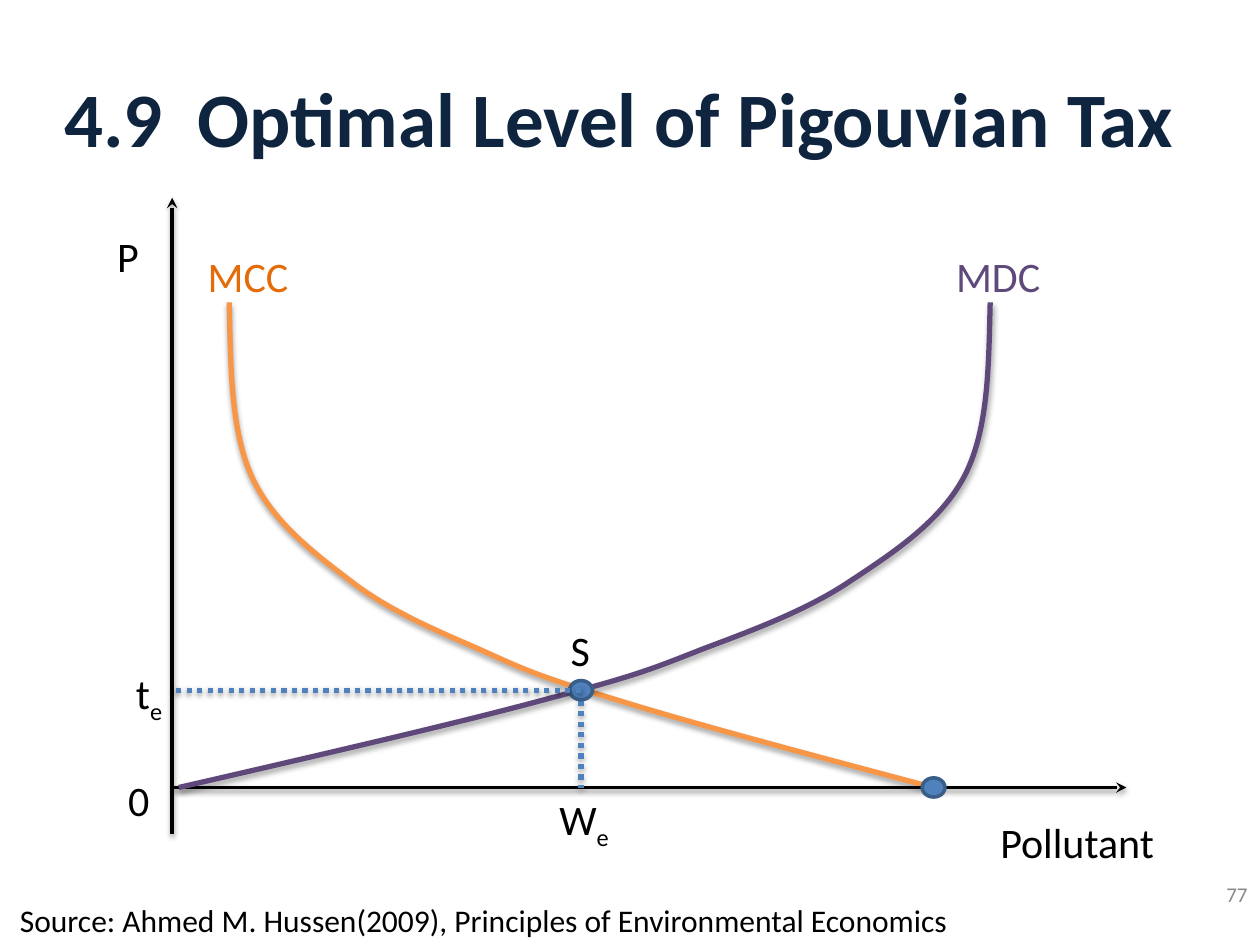
import pptx
import pptx.dml.color
import pptx.enum.dml
import pptx.enum.shapes
import pptx.enum.text
import pptx.oxml
import pptx.oxml.ns
import pptx.util
from lxml import etree

Pt = pptx.util.Pt
ALIGN = pptx.enum.text.PP_ALIGN
ANCHOR = pptx.enum.text.MSO_ANCHOR

FONT = "Calibri"
BLACK, BLUE, ORANGE, PURPLE = "000000", "4F81BD", "F79646", "5F497A"

# Key places of the diagram
AXIS_X, AXIS_Y = 98.4, 450
OPTIMUM_X, OPTIMUM_Y = 332, 394.4
MCC_END = 533.5

# Both curves share one form: percent of the way across, height on the page
CURVE_START_Y = 172.8
CURVE_POINTS = [
    (0.2, 208.8), (0.2, 244.8), (3.1, 271.4),
    (6, 297.6), (11.8, 315.4), (17.2, 331.9),
    (22.5, 348.5), (29.2, 360), (35.4, 370.8),
    (41.7, 382.3), (43.5, 385.9), (54.2, 398.9),
    (65, 412.6), (82.5, 431.3), (100, 450),
]


def color(hex_string):
    return pptx.dml.color.RGBColor.from_string(hex_string)


def add_shadow(shape):
    """Give a line a soft shadow just below it."""
    properties = shape._element.spPr
    effects = etree.SubElement(properties, pptx.oxml.ns.qn("a:effectLst"))
    effects.append(pptx.oxml.parse_xml(
        f'<a:outerShdw {pptx.oxml.ns.nsdecls("a")} blurRad="{Pt(3.1)}" '
        f'dist="{Pt(1.6)}" dir="5400000" rotWithShape="0">'
        '<a:srgbClr val="000000"><a:alpha val="38000"/></a:srgbClr>'
        '</a:outerShdw>'))


def add_label(page, text, box, size=24, ink=BLACK, subscript="", bold=False,
              align=ALIGN.LEFT, anchor=ANCHOR.TOP):
    label = page.shapes.add_textbox(*map(Pt, box))
    frame = label.text_frame
    frame.word_wrap = True
    frame.vertical_anchor = anchor
    para = frame.paragraphs[0]
    para.alignment = align
    para.font.name = FONT
    para.font.size = Pt(size)
    para.font.bold = bold
    para.font.color.rgb = color(ink)
    para.add_run().text = text
    if subscript:
        span = para.add_run()
        span.text = subscript
        span._r.get_or_add_rPr().set("baseline", "-25000")


def add_line(page, start, end, ink, width, dotted=False, arrow=False):
    line = page.shapes.add_connector(
        pptx.enum.shapes.MSO_CONNECTOR.STRAIGHT, *map(Pt, start + end))
    line.line.color.rgb = color(ink)
    line.line.width = Pt(width)
    if dotted:
        line.line.dash_style = pptx.enum.dml.MSO_LINE.ROUND_DOT
        line.line._ln.find(pptx.oxml.ns.qn("a:prstDash")).set("val", "sysDot")
    if arrow:
        etree.SubElement(line.line._ln, pptx.oxml.ns.qn("a:tailEnd"), type="stealth")
    add_shadow(line)


def add_curve(page, start_x, end_x, ink):
    """Lay out the control points, then join each three into a Bezier segment."""
    points = [(Pt(start_x + (end_x - start_x) * share / 100), Pt(y))
              for share, y in CURVE_POINTS]
    builder = page.shapes.build_freeform(Pt(start_x), Pt(CURVE_START_Y))
    builder.add_line_segments(points, close=False)
    curve = builder.convert_to_shape()
    outline = curve._element.find(".//" + pptx.oxml.ns.qn("a:path"))
    steps = outline.findall(pptx.oxml.ns.qn("a:lnTo"))
    for first in range(0, len(steps), 3):
        bezier = etree.SubElement(outline, pptx.oxml.ns.qn("a:cubicBezTo"))
        for step in steps[first:first + 3]:
            bezier.append(step[0])
            outline.remove(step)
    curve.fill.background()
    curve.line.color.rgb = color(ink)
    curve.line.width = Pt(3)
    add_shadow(curve)


def add_dot(page, center_x, center_y, width=13, height=11):
    dot = page.shapes.add_shape(
        pptx.enum.shapes.MSO_SHAPE.OVAL, Pt(center_x - width / 2),
        Pt(center_y - height / 2), Pt(width), Pt(height))
    dot.shadow.inherit = False
    dot.fill.solid()
    dot.fill.fore_color.rgb = color(BLUE)
    dot.line.color.rgb = color("395E89")
    dot.line.width = Pt(2)


def main():
    deck = pptx.Presentation()
    deck.slide_width, deck.slide_height = Pt(720), Pt(540)
    page = deck.slides.add_slide(deck.slide_layouts[6])

    # Title and page number
    add_label(page, "4.9  Optimal Level of Pigouvian Tax ", (14.4, 21.6, 689, 90),
              44, "0F243E", bold=True, align=ALIGN.CENTER, anchor=ANCHOR.MIDDLE)
    add_label(page, "77", (683.3, 496.8, 36.7, 28.8), 12, "888888",
              align=ALIGN.RIGHT, anchor=ANCHOR.MIDDLE)

    # Axes and cost curves
    add_curve(page, 131, MCC_END, ORANGE)
    add_line(page, (AXIS_X, AXIS_Y), (643.7, AXIS_Y), BLACK, 2, arrow=True)
    add_line(page, (AXIS_X, 476.6), (AXIS_X, 113), BLACK, 2, arrow=True)
    add_curve(page, 565.9, 102.2, PURPLE)

    # Optimum, with its guides to both axes
    add_line(page, (OPTIMUM_X, OPTIMUM_Y), (OPTIMUM_X, AXIS_Y), BLUE, 3, dotted=True)
    add_dot(page, OPTIMUM_X, OPTIMUM_Y)
    add_dot(page, MCC_END, AXIS_Y)
    add_line(page, (OPTIMUM_X, OPTIMUM_Y), (100, OPTIMUM_Y), BLUE, 3, dotted=True)

    # Labels
    add_label(page, "MDC", (539.3, 139.7, 90.7, 35.3), ink=PURPLE)
    add_label(page, "MCC", (111.6, 139.7, 71.3, 35.3), ink="E36C09")
    add_label(page, "P", (59.8, 128.2, 38.9, 35.3))
    add_label(page, "0", (66.2, 439.2, 38.9, 35.3))
    add_label(page, "W", (312.5, 450, 51.8, 35.3), subscript="e")
    add_label(page, "S", (319, 353.5, 38.9, 36))
    add_label(page, "t", (70.6, 378, 51.8, 36), subscript="e")
    add_label(page, "Pollutant", (564.5, 463, 114.5, 34.6))

    # Source
    add_label(page, "Source: Ahmed M. Hussen(2009), Principles of Environmental Economics",
              (4.3, 511.2, 564.5, 28.8), 18)

    deck.save("out.pptx")


if __name__ == "__main__":
    main()
